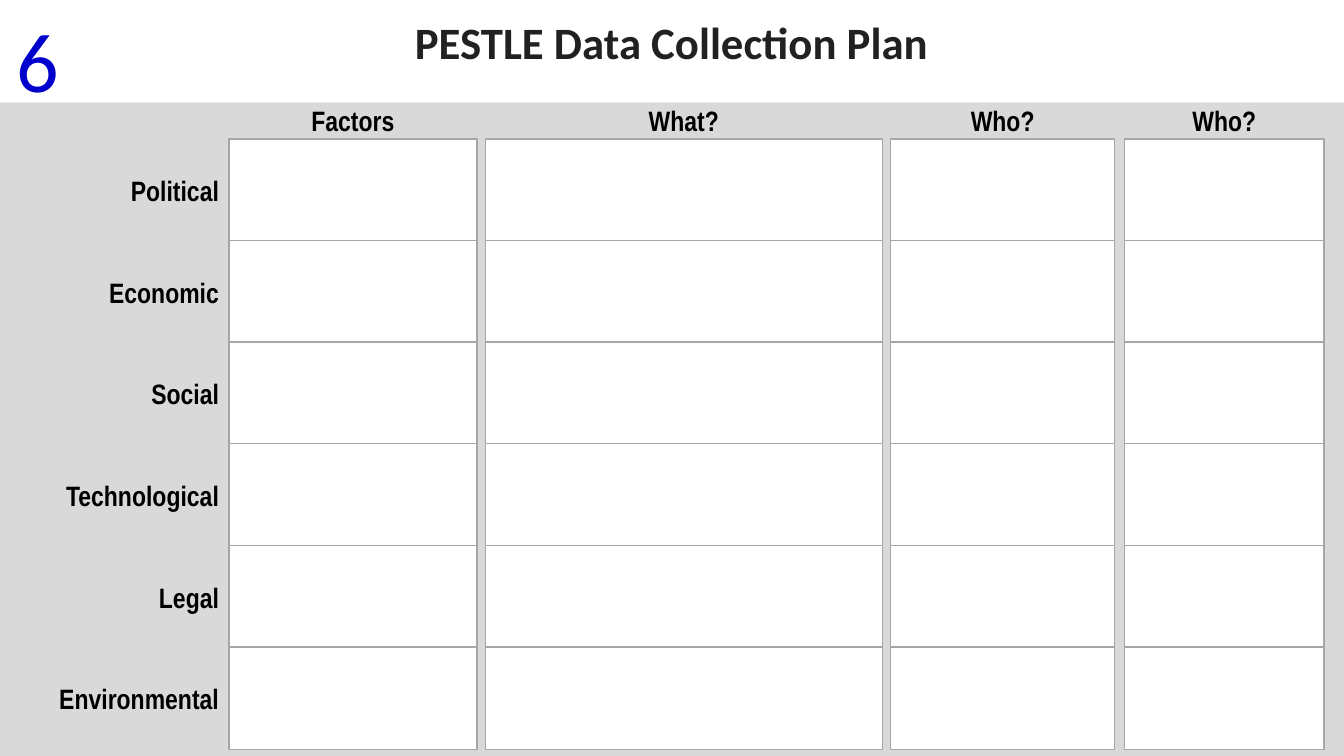
"""Build the PESTLE data collection plan slide."""
from pptx import Presentation
from pptx.dml.color import RGBColor
from pptx.enum.shapes import MSO_SHAPE as Shape
from pptx.enum.text import MSO_ANCHOR as Anchor, MSO_AUTO_SIZE as AutoSize, PP_ALIGN as Align
from pptx.util import Cm, Pt

FACTORS = ["Political", "Economic", "Social", "Technological", "Legal", "Environmental"]
COLUMNS = [
    ("Factors", 5.77, 6.25),
    ("What?", 12.23, 10.01),
    ("Who?", 22.45, 5.64),
    ("Who?", 28.34, 5.03),
]
GRID_TOP, ROW_PITCH, CELL_HEIGHT = 3.5, 2.56, 2.59
LABEL_HEIGHT = 1.12


def colour(code):
    """Return the colour for a hex string."""
    return RGBColor.from_string(code)


def write(frame, text, *, size=20, font="Arial Narrow", ink="000000", bold=True,
          align=Align.CENTER, anchor=Anchor.MIDDLE, wrap=True):
    """Put formatted text into a text frame."""
    frame.word_wrap = wrap
    frame.auto_size = AutoSize.SHAPE_TO_FIT_TEXT
    frame.vertical_anchor = anchor
    paragraph = frame.paragraphs[0]
    paragraph.alignment = align
    run = paragraph.add_run()
    run.text = text
    run.font.size = Pt(size)
    run.font.name = font
    run.font.bold = bold
    run.font.color.rgb = colour(ink)


def add_label(shapes, text, left, top, width, height=LABEL_HEIGHT, **text_format):
    """Add a text box placed in centimetres."""
    label = shapes.add_textbox(Cm(left), Cm(top), Cm(width), Cm(height))
    write(label.text_frame, text, **text_format)


def add_block(shapes, kind, left, top, width, height, fill, outline=None):
    """Add a filled shape, with a thin outline if one is given."""
    block = shapes.add_shape(kind, Cm(left), Cm(top), Cm(width), Cm(height))
    block.shadow.inherit = False
    block.fill.solid()
    block.fill.fore_color.rgb = colour(fill)
    if outline:
        block.line.color.rgb = colour(outline)
        block.line.width = Pt(1)
    else:
        block.line.fill.background()
    return block


def add_title(slide, text):
    """Place and format the slide title."""
    title = slide.shapes.title
    title.left, title.top, title.width, title.height = Cm(1.14), Cm(0.25), Cm(31.57), Cm(1.63)
    write(title.text_frame, text, size=32, font="Calibri", ink="202122", anchor=Anchor.TOP)


def add_factor_row(slide, factor, top):
    """Add one factor with its empty cells as a group."""
    row = slide.shapes.add_group_shape().shapes
    add_label(row, factor, 0.5, top + 0.74, 5.27, align=Align.RIGHT)
    for _, left, width in COLUMNS:
        cell = add_block(row, Shape.ROUNDED_RECTANGLE, left, top, width, CELL_HEIGHT,
                         "FFFFFF", outline="A6A6A6")
        cell.adjustments[0] = 0


def main():
    """Build and save the slide."""
    deck = Presentation()
    deck.slide_width, deck.slide_height = Cm(33.87), Cm(19.05)
    slide = deck.slides.add_slide(deck.slide_layouts[5])
    add_title(slide, "PESTLE Data Collection Plan")
    add_label(slide.shapes, "6", 0.15, 0.08, 1.6, 2.82, size=60, font="Calibri",
              ink="0000CC", bold=False, anchor=Anchor.TOP, wrap=False)
    add_block(slide.shapes, Shape.RECTANGLE, 0, 2.58, 33.87, 16.5, "D9D9D9")
    for heading, left, width in COLUMNS:
        add_label(slide.shapes, heading, left, 2.46, width)
    for index, factor in enumerate(FACTORS):
        add_factor_row(slide, factor, GRID_TOP + index * ROW_PITCH)
    deck.save("out.pptx")


if __name__ == "__main__":
    main()
